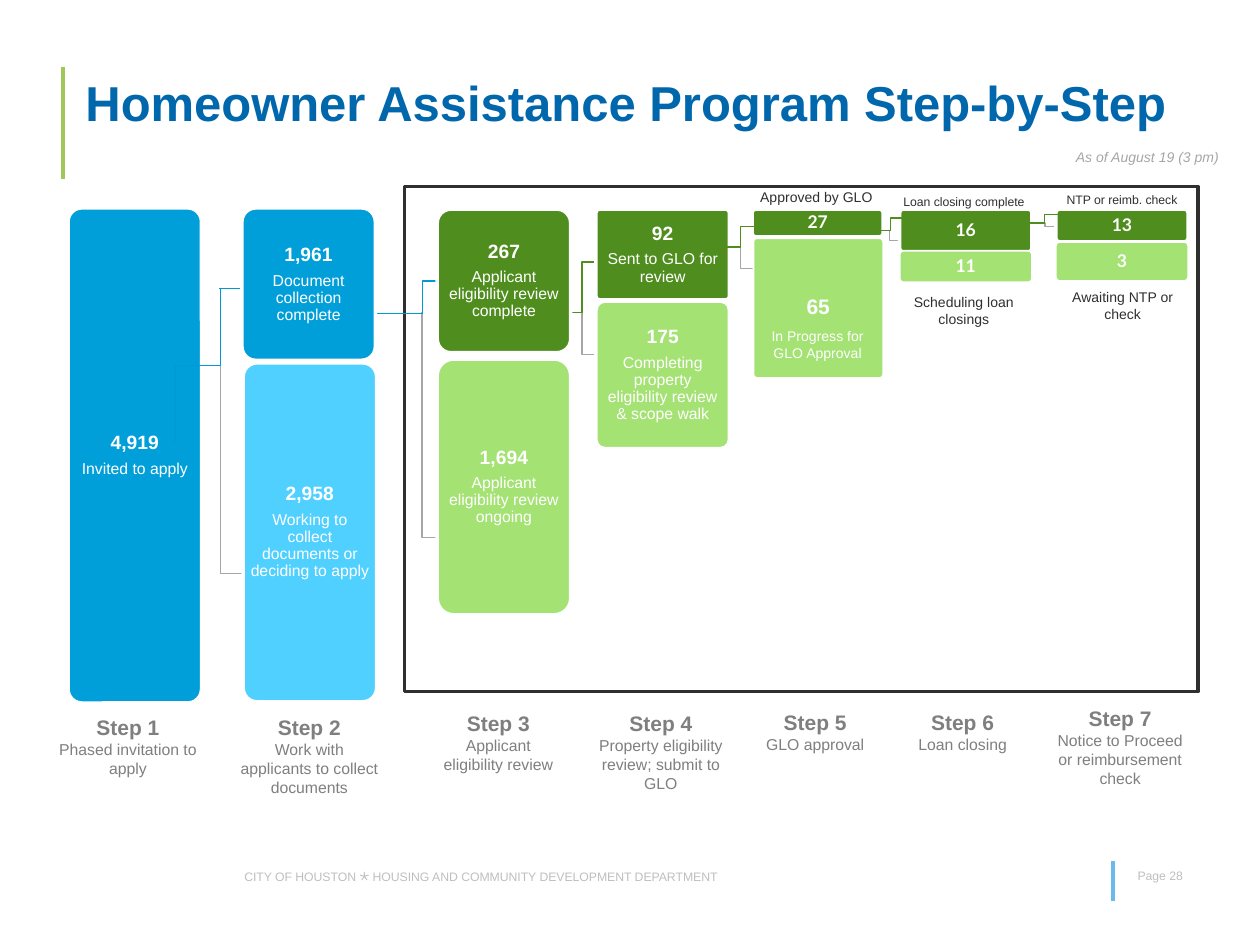
from lxml import etree
from pptx import Presentation
from pptx import util as u
from pptx.dml.color import RGBColor
from pptx.enum import shapes, text
from pptx.oxml.ns import qn

PX = 9144  # EMU per px, 100 px to the inch
WHITE = RGBColor(0xFF, 0xFF, 0xFF)
BLUE = RGBColor(0x00, 0x9F, 0xDA)
SKY = RGBColor(0x50, 0xD0, 0xFF)
LINK_BLUE = RGBColor(0x00, 0x9B, 0xD5)
TITLE_BLUE = RGBColor(0x00, 0x67, 0xAC)
FOOTER_BLUE = RGBColor(0x6A, 0xBA, 0xEC)
GREEN = RGBColor(0x4F, 0x8E, 0x1E)
LIME = RGBColor(0xA4, 0xE2, 0x74)
ACCENT = RGBColor(0xA0, 0xC6, 0x5C)
INK = RGBColor(0x2F, 0x2F, 0x2F)
STEP_GREY = RGBColor(0x7F, 0x7F, 0x7F)
LINK_GREY = RGBColor(0xA6, 0xA6, 0xA6)
PALE = RGBColor(0xBF, 0xBF, 0xBF)
LEFT, CENTER = text.PP_ALIGN.LEFT, text.PP_ALIGN.CENTER


def emu(*lengths):
    return [u.Emu(round(length * PX)) for length in lengths]


class FlowSlide:
    """Holds the style and the current slide."""

    font = "Arial"

    def __init__(self, page):
        self.page = page

    def add_span(self, para, words, size, color, **form):
        span = para.add_run()
        span.text = words
        values = {"name": self.font, "size": u.Pt(size), "bold": False} | form
        for key, value in values.items():
            setattr(span.font, key, value)
        span.font.color.rgb = color

    def label(self, at, words, size, color, align=CENTER, wrap=True, **form):
        """Adds a text box and returns its frame."""
        frame = self.page.shapes.add_textbox(*emu(*at)).text_frame
        frame.word_wrap = wrap
        frame.paragraphs[0].alignment = align
        self.add_span(frame.paragraphs[0], words, size, color, **form)
        return frame

    def step(self, at, number, words):
        frame = self.label(at, f"Step {number}", 12, STEP_GREY, bold=True)
        para = frame.add_paragraph()
        para.alignment = CENTER
        self.add_span(para, words, 9, STEP_GREY)

    def card(self, at, fill, number, note="", radius=3, edge=2, size=11, font="Arial"):
        box = self.page.shapes.add_shape(
            shapes.MSO_SHAPE.ROUNDED_RECTANGLE, *emu(*at))
        box.adjustments[0] = radius / min(at[2:])
        box.shadow.inherit = False
        box.fill.solid()
        box.fill.fore_color.rgb = fill
        box.line.color.rgb = WHITE
        box.line.width = u.Pt(edge)
        frame = box.text_frame
        frame.word_wrap = True
        frame.vertical_anchor = text.MSO_ANCHOR.MIDDLE
        inset, = emu(5 - round(0.29 * radius) if note else 1)
        for side in ("left", "right", "top", "bottom"):
            setattr(frame, f"margin_{side}", inset)
        para = frame.paragraphs[0]
        para.alignment, para.line_spacing = CENTER, 0.9
        self.add_span(para, number, size, WHITE, bold=True, name=font)
        if note:
            para.space_after = u.Pt(4)
            para = frame.add_paragraph()
            para.alignment, para.line_spacing = CENTER, 0.9
            self.add_span(para, note, 9, WHITE)

    def frame(self, at):
        box = self.page.shapes.add_shape(shapes.MSO_SHAPE.RECTANGLE, *emu(*at))
        box.shadow.inherit = False
        box.fill.background()
        box.line.color.rgb = INK
        box.line.width = u.Pt(2)

    def line(self, ends, color, width=0.75, kind=shapes.MSO_CONNECTOR.STRAIGHT):
        link = self.page.shapes.add_connector(kind, *emu(*ends))
        link.line.color.rgb = color
        link.line.width = u.Pt(width)
        properties = link._element.spPr
        etree.SubElement(properties, qn("a:effectLst"))
        return properties

    def elbow(self, ends, color, bend=0.5, upright=False):
        """Bent connector; an upright one leaves and arrives vertically."""
        if upright:
            x1, y1, x2, y2 = ends
            x, y = (x1 + x2) / 2, (y1 + y2) / 2
            ends = x - y1 + y, y + x1 - x, x + y1 - y, y - x1 + x
        properties = self.line(ends, color, kind=shapes.MSO_CONNECTOR.ELBOW)
        if upright:
            properties.find(qn("a:xfrm")).set("rot", "16200000")
        guides = properties.find(qn("a:prstGeom")).find(qn("a:avLst"))
        etree.SubElement(guides, qn("a:gd"), name="adj1",
                         fmla=f"val {round(bend * 100000)}")


def main():
    deck = Presentation()
    deck.slide_width, deck.slide_height = emu(1000, 750)
    slide = FlowSlide(deck.slides.add_slide(deck.slide_layouts[6]))

    footer = slide.label((184, 681, 408, 27), "CITY OF HOUSTON ", 7, PALE, LEFT)
    slide.add_span(footer.paragraphs[0], "⋆", 10, PALE)
    slide.add_span(footer.paragraphs[0],
                   " HOUSING AND COMMUNITY DEVELOPMENT DEPARTMENT", 7, PALE)
    slide.line((883, 683, 883, 715), FOOTER_BLUE, 2.25)
    slide.line((50, 53, 50, 142), ACCENT, 2.25)
    slide.label((893, 684, 58, 31), "Page 28", 7, PALE, LEFT)
    slide.label((58, 53, 901, 57), "Homeowner Assistance Program Step-by-Step",
                28, TITLE_BLUE, LEFT, bold=True)
    slide.label((844, 113, 136, 24), "As of August 19 (3 pm)", 8, LINK_GREY,
                LEFT, wrap=False, italic=True)

    slide.frame((321, 148, 630, 401))
    slide.elbow((806, 177, 853, 180), LINK_GREY)
    slide.elbow((706, 183, 774, 191), LINK_GREY, 0.004)
    for ends, bend in (((588, 195, 611, 229), 0.54),
                       ((462, 248, 521, 315), 0.5),
                       ((335, 248, 395, 466), 0.82),
                       ((175, 288, 218, 387), 1.69)):
        slide.elbow(ends, LINK_GREY, bend, upright=True)
    slide.elbow((482, 208, 442, 248), GREEN)
    slide.elbow((372, 223, 299, 249), LINK_BLUE)
    slide.line((174, 229, 193, 229), LINK_BLUE)

    for at, fill, number, note, radius in (
            ((54, 165, 106, 393), BLUE, "4,919", "Invited to apply", 11),
            ((192, 165, 106, 121), BLUE, "1,961", "Document collection complete", 11),
            ((193, 288, 106, 269), SKY, "2,958",
             "Working to collect documents or deciding to apply", 11),
            ((347, 166, 106, 114), GREEN, "267",
             "Applicant eligibility review complete", 11),
            ((347, 285, 106, 203), LIME, "1,694",
             "Applicant eligibility review ongoing", 13),
            ((473, 239, 106, 117), LIME, "175",
             "Completing property eligibility review & scope walk", 7),
            ((473, 166, 106, 72), GREEN, "92", "Sent to GLO for review", 3)):
        slide.card(at, fill, number, note, radius)

    slide.card((598, 189, 103, 111), LIME, "65", edge=1, size=12)
    for at, fill, number, edge in (((597, 166, 104, 22), GREEN, "27", 2),
                                   ((714, 166, 105, 34), GREEN, "16", 2),
                                   ((714, 199, 105, 25), LIME, "11", 1),
                                   ((838, 166, 105, 26), GREEN, "13", 2),
                                   ((838, 192, 105, 31), LIME, "3", 1)):
        slide.card(at, fill, number, edge=edge, size=10, font="Lato")

    slide.elbow((139, 351, 175, 229), LINK_BLUE, upright=True)
    for ends in ((606, 180, 570, 196), (721, 173, 692, 183), (844, 170, 814, 177)):
        slide.elbow(ends, GREEN)

    for at, words, size, color in (
            ((593, 145, 110, 39), "Approved by GLO", 8, INK),
            ((591, 255, 116, 54), "In Progress for GLO Approval", 8, WHITE),
            ((701, 149, 128, 22), "Loan closing complete", 7, INK),
            ((707, 228, 116, 37), "Scheduling loan closings", 8, INK),
            ((833, 148, 115, 22), "NTP or reimb. check", 7, INK),
            ((837, 224, 108, 37), "Awaiting NTP or check", 8, INK)):
        slide.label(at, words, size, color)

    steps = (((37, 562, 129, 61), "Phased invitation to apply"),
             ((181, 562, 129, 76), "Work with applicants to collect documents"),
             ((336, 559, 119, 61), "Applicant eligibility review"),
             ((460, 559, 129, 99), "Property eligibility review; submit to GLO"),
             ((598, 558, 98, 45), "GLO approval"),
             ((702, 558, 124, 47), "Loan closing"),
             ((827, 555, 124, 76), "Notice to Proceed or reimbursement check"))
    for number, (at, words) in enumerate(steps, 1):
        slide.step(at, number, words)

    deck.save("out.pptx")


if __name__ == "__main__":
    main()
